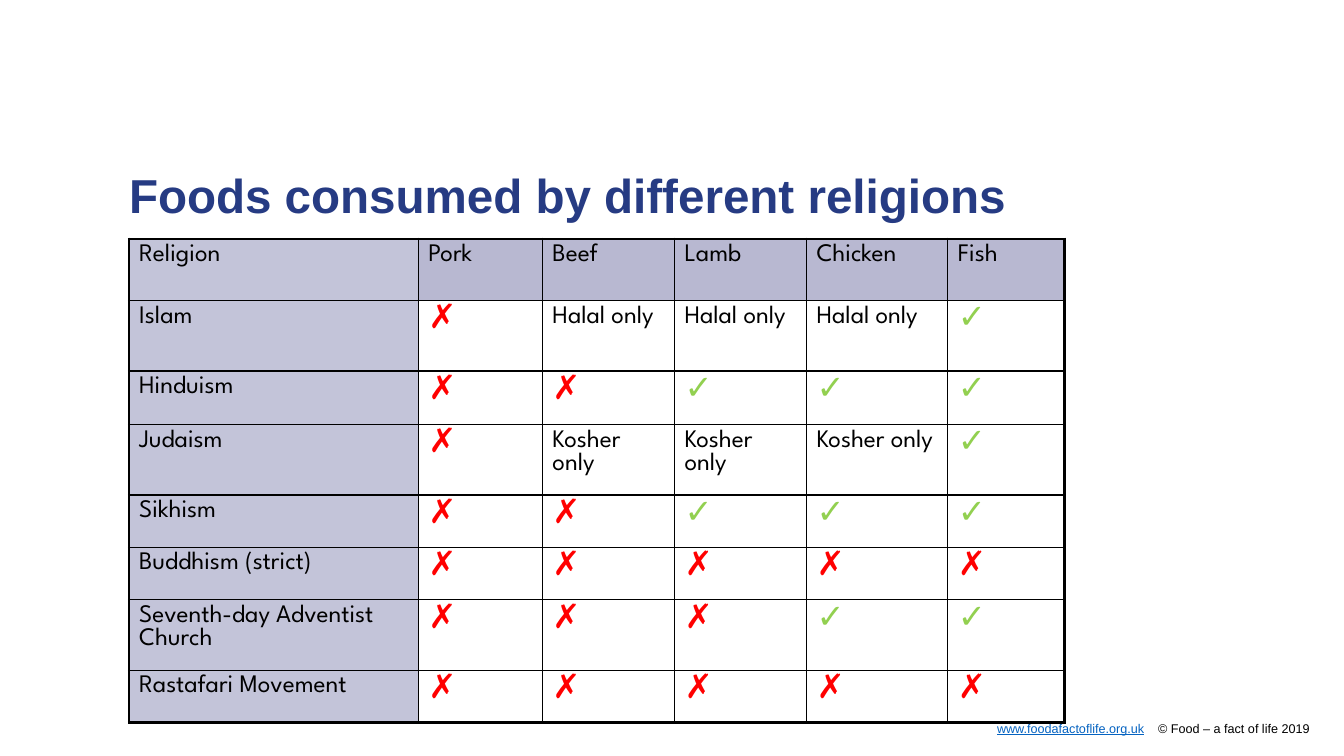
from dataclasses import dataclass

from lxml import etree
from pptx import Presentation
from pptx.dml.color import RGBColor
from pptx.enum import text
from pptx.oxml import ns
from pptx.util import Inches, Pt


@dataclass(frozen=True)
class Theme:
    heading_font: str = "Arial"
    table_font: str = "League Spartan"
    title_color: str = "263B83"
    link_color: str = "0563C1"
    ink: str = "000000"
    allowed: str = "92D050"
    forbidden: str = "FF0000"
    paper: str = "FFFFFF"
    header_fill: str = "B8B8D1"
    religion_fill: str = "C3C4D9"
    title_size: int = 34
    body_size: int = 18
    mark_size: int = 24
    footer_size: int = 9
    inner_line: int = 1
    outer_line: int = 2


@dataclass(frozen=True)
class Religion:
    name: str
    foods: tuple[str, ...]
    height: float


THEME = Theme()
NO, YES = "✗", "✓"
HALAL, KOSHER = "Halal only", "Kosher only"
COLUMN_WIDTHS = (2.87, 1.23, 1.31, 1.31, 1.4, 1.16)
ROWS = (
    Religion("Religion", ("Pork", "Beef", "Lamb", "Chicken", "Fish"), 0.61),
    Religion("Islam", (NO, HALAL, HALAL, HALAL, YES), 0.7),
    Religion("Hinduism", (NO, NO, YES, YES, YES), 0.53),
    Religion("Judaism", (NO, KOSHER, KOSHER, KOSHER, YES), 0.7),
    Religion("Sikhism", (NO, NO, YES, YES, YES), 0.52),
    Religion("Buddhism (strict)", (NO,) * 5, 0.52),
    Religion("Seventh-day Adventist Church", (NO, NO, NO, YES, YES), 0.7),
    Religion("Rastafari Movement", (NO,) * 5, 0.52),
)


def format_font(font, color: str, **values) -> None:
    font.color.rgb = RGBColor.from_string(color)
    for name, value in values.items():
        setattr(font, name, value)


def place(shape, left: float, top: float, width: float, height: float) -> None:
    box = {"left": left, "top": top, "width": width, "height": height}
    for name, value in box.items():
        setattr(shape, name, Inches(value))


def prepare_frame(frame) -> None:
    """Wrap the text from the top left corner, without margins."""
    values = {
        "margin_left": 0, "margin_top": 0, "margin_right": 0, "margin_bottom": 0,
        "word_wrap": True, "auto_size": text.MSO_AUTO_SIZE.NONE,
        "vertical_anchor": text.MSO_ANCHOR.TOP,
    }
    for name, value in values.items():
        setattr(frame, name, value)


def add_title(slide) -> None:
    title = slide.shapes.title
    place(title, 1.28, 1.71, 10.63, 0.79)
    prepare_frame(title.text_frame)
    paragraph = title.text_frame.paragraphs[0]
    paragraph.alignment = text.PP_ALIGN.LEFT
    paragraph.line_spacing = 0.9
    run = paragraph.add_run()
    run.text = "Foods consumed by different religions"
    format_font(run.font, THEME.title_color, name=THEME.heading_font,
                size=Pt(THEME.title_size), bold=True)


def add_footer(slide) -> None:
    footer = slide.shapes.add_textbox(0, 0, 0, 0)
    place(footer, 1.26, 7.15, 11.73, 0.15)
    prepare_frame(footer.text_frame)
    paragraph = footer.text_frame.paragraphs[0]
    paragraph.alignment = text.PP_ALIGN.RIGHT
    parts = (
        ("www.foodafactoflife.org.uk", THEME.link_color, True),
        (" ", THEME.ink, False),
        ("© Food – a fact of life 2019", THEME.ink, False),
    )
    for content, color, underline in parts:
        run = paragraph.add_run()
        run.text = content
        format_font(run.font, color, name=THEME.heading_font,
                    size=Pt(THEME.footer_size), underline=underline)
    # Widen the single space between address and copyright line.
    paragraph.runs[1]._r.get_or_add_rPr().set("spc", "750")


def set_borders(cell, widths: dict[str, int]) -> None:
    properties = cell._tc.get_or_add_tcPr()
    for side, width in widths.items():
        line = etree.SubElement(properties, ns.qn(f"a:ln{side}"), w=str(Pt(width)))
        fill = etree.SubElement(line, ns.qn("a:solidFill"))
        etree.SubElement(fill, ns.qn("a:srgbClr"), val=THEME.ink)


def fill_cell(cell, content: str, fill: str) -> None:
    cell.fill.solid()
    cell.fill.fore_color.rgb = RGBColor.from_string(fill)
    run = cell.text_frame.paragraphs[0].add_run()
    run.text = content
    color = {NO: THEME.forbidden, YES: THEME.allowed}.get(content, THEME.ink)
    size = THEME.mark_size if content in (NO, YES) else THEME.body_size
    format_font(run.font, color, name=THEME.table_font,
                size=Pt(size), bold=content == YES)


def add_food_table(slide) -> None:
    frame = slide.shapes.add_table(
        len(ROWS), len(COLUMN_WIDTHS), Inches(1.28), Inches(2.37),
        Inches(sum(COLUMN_WIDTHS)), Inches(sum(row.height for row in ROWS)))
    table = frame.table
    table.first_row = table.horz_banding = False
    for column, width in zip(table.columns, COLUMN_WIDTHS):
        column.width = Inches(width)
    last_row, last_column = len(ROWS) - 1, len(COLUMN_WIDTHS) - 1
    for i, religion in enumerate(ROWS):
        table.rows[i].height = Inches(religion.height)
        for j, content in enumerate((religion.name, *religion.foods)):
            cell = table.cell(i, j)
            outer = {"L": j == 0, "R": j == last_column,
                     "T": i == 0, "B": i == last_row}
            set_borders(cell, {
                side: THEME.outer_line if edge else THEME.inner_line
                for side, edge in outer.items()})
            if j == 0:
                fill = THEME.religion_fill
            else:
                fill = THEME.header_fill if i == 0 else THEME.paper
            fill_cell(cell, content, fill)


def main() -> None:
    presentation = Presentation()
    presentation.slide_width = Inches(13.33)
    presentation.slide_height = Inches(7.5)
    slide = presentation.slides.add_slide(presentation.slide_layouts[5])
    add_footer(slide)
    add_title(slide)
    add_food_table(slide)
    presentation.save("out.pptx")


if __name__ == "__main__":
    main()
